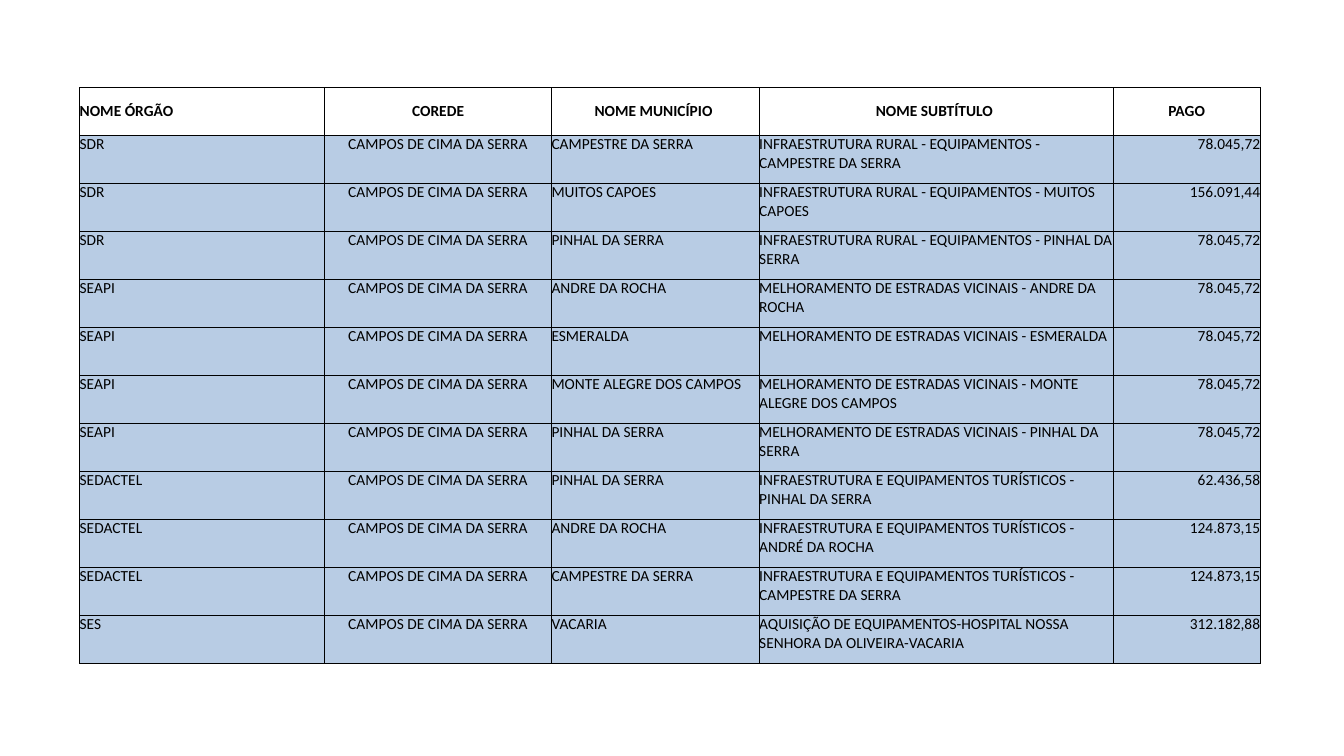
from dataclasses import dataclass
from typing import NamedTuple

from lxml.etree import SubElement
from pptx import Presentation
from pptx.dml.color import RGBColor
from pptx.enum.text import MSO_ANCHOR as Anchor, PP_ALIGN as Align
from pptx.oxml.ns import qn
from pptx.util import Inches, Pt


@dataclass(frozen=True)
class Theme:
    font: str = "Calibri"
    size: float = 11
    text: str = "000000"
    border: str = "000000"
    border_width: float = 0.5
    header_fill: str = "FFFFFF"
    body_fill: str = "B8CCE4"


class Column(NamedTuple):
    heading: str
    weight: int
    heading_align: Align
    align: Align


class Payment(NamedTuple):
    agency: str
    corede: str
    town: str
    subtitle: str
    paid: str


THEME = Theme()
SLIDE_W, SLIDE_H = Inches(13.33), Inches(7.5)
LEFT, TOP = Inches(0.79), Inches(0.87)
TABLE_W, TABLE_H = Inches(11.71), Inches(5.71)
HEADER_H = Inches(0.47)

COLUMNS = [
    Column("NOME ÓRGÃO", 243, Align.LEFT, Align.LEFT),
    Column("COREDE", 225, Align.CENTER, Align.CENTER),
    Column("NOME MUNICÍPIO ", 206, Align.CENTER, Align.LEFT),
    Column("NOME SUBTÍTULO ", 351, Align.CENTER, Align.LEFT),
    Column("PAGO", 146, Align.CENTER, Align.RIGHT),
]

REGION = "CAMPOS DE CIMA DA SERRA"
RURAL = "INFRAESTRUTURA RURAL - EQUIPAMENTOS - "
ROADS = "MELHORAMENTO DE ESTRADAS VICINAIS - "
TOURISM = "INFRAESTRUTURA E EQUIPAMENTOS TURÍSTICOS - "
HOSPITAL = "AQUISIÇÃO DE EQUIPAMENTOS-HOSPITAL NOSSA SENHORA DA OLIVEIRA-VACARIA"

PAYMENTS = [
    Payment("SDR", REGION, "CAMPESTRE DA SERRA", RURAL + "CAMPESTRE DA SERRA", "78.045,72"),
    Payment("SDR", REGION, "MUITOS CAPOES", RURAL + "MUITOS CAPOES", "156.091,44"),
    Payment("SDR", REGION, "PINHAL DA SERRA", RURAL + "PINHAL DA SERRA", "78.045,72"),
    Payment("SEAPI", REGION, "ANDRE DA ROCHA", ROADS + "ANDRE DA ROCHA", "78.045,72"),
    Payment("SEAPI", REGION, "ESMERALDA", ROADS + "ESMERALDA", "78.045,72"),
    Payment("SEAPI", REGION, "MONTE ALEGRE DOS CAMPOS", ROADS + "MONTE ALEGRE DOS CAMPOS", "78.045,72"),
    Payment("SEAPI", REGION, "PINHAL DA SERRA", ROADS + "PINHAL DA SERRA", "78.045,72"),
    Payment("SEDACTEL", REGION, "PINHAL DA SERRA", TOURISM + "PINHAL DA SERRA", "62.436,58"),
    Payment("SEDACTEL", REGION, "ANDRE DA ROCHA", TOURISM + "ANDRÉ DA ROCHA", "124.873,15"),
    Payment("SEDACTEL", REGION, "CAMPESTRE DA SERRA", TOURISM + "CAMPESTRE DA SERRA", "124.873,15"),
    Payment("SES", REGION, "VACARIA", HOSPITAL, "312.182,88"),
]


def add_borders(cell) -> None:
    tc_pr = cell._tc.get_or_add_tcPr()
    for side in ("a:lnL", "a:lnR", "a:lnT", "a:lnB"):
        ln = SubElement(tc_pr, qn(side), w=str(Pt(THEME.border_width)))
        fill = SubElement(ln, qn("a:solidFill"))
        SubElement(fill, qn("a:srgbClr"), val=THEME.border)


def fill_cell(cell, text: str, align: Align, header: bool) -> None:
    add_borders(cell)
    cell.fill.solid()
    color = THEME.header_fill if header else THEME.body_fill
    cell.fill.fore_color.rgb = RGBColor.from_string(color)
    cell.margin_left = cell.margin_right = cell.margin_top = cell.margin_bottom = 0
    cell.vertical_anchor = Anchor.MIDDLE if header else Anchor.TOP
    p = cell.text_frame.paragraphs[0]
    p.alignment = align
    r = p.add_run()
    r.text = text
    r.font.name = THEME.font
    r.font.size = Pt(THEME.size)
    r.font.bold = header
    r.font.color.rgb = RGBColor.from_string(THEME.text)


def add_payment_table(s) -> None:
    frame = s.shapes.add_table(len(PAYMENTS) + 1, len(COLUMNS), LEFT, TOP, TABLE_W, TABLE_H)
    table = frame.table
    table.first_row = table.horz_banding = False
    total = sum(col.weight for col in COLUMNS)
    body_h = (TABLE_H - HEADER_H) // len(PAYMENTS)
    for i, row in enumerate(table.rows):
        row.height = body_h if i else HEADER_H
    for j, col in enumerate(COLUMNS):
        table.columns[j].width = TABLE_W * col.weight // total
        fill_cell(table.cell(0, j), col.heading, col.heading_align, True)
        for i, payment in enumerate(PAYMENTS, start=1):
            fill_cell(table.cell(i, j), payment[j], col.align, False)


def main() -> None:
    prs = Presentation()
    prs.slide_width, prs.slide_height = SLIDE_W, SLIDE_H
    s = prs.slides.add_slide(prs.slide_layouts.get_by_name("Blank"))
    add_payment_table(s)
    prs.save("out.pptx")


if __name__ == "__main__":
    main()
